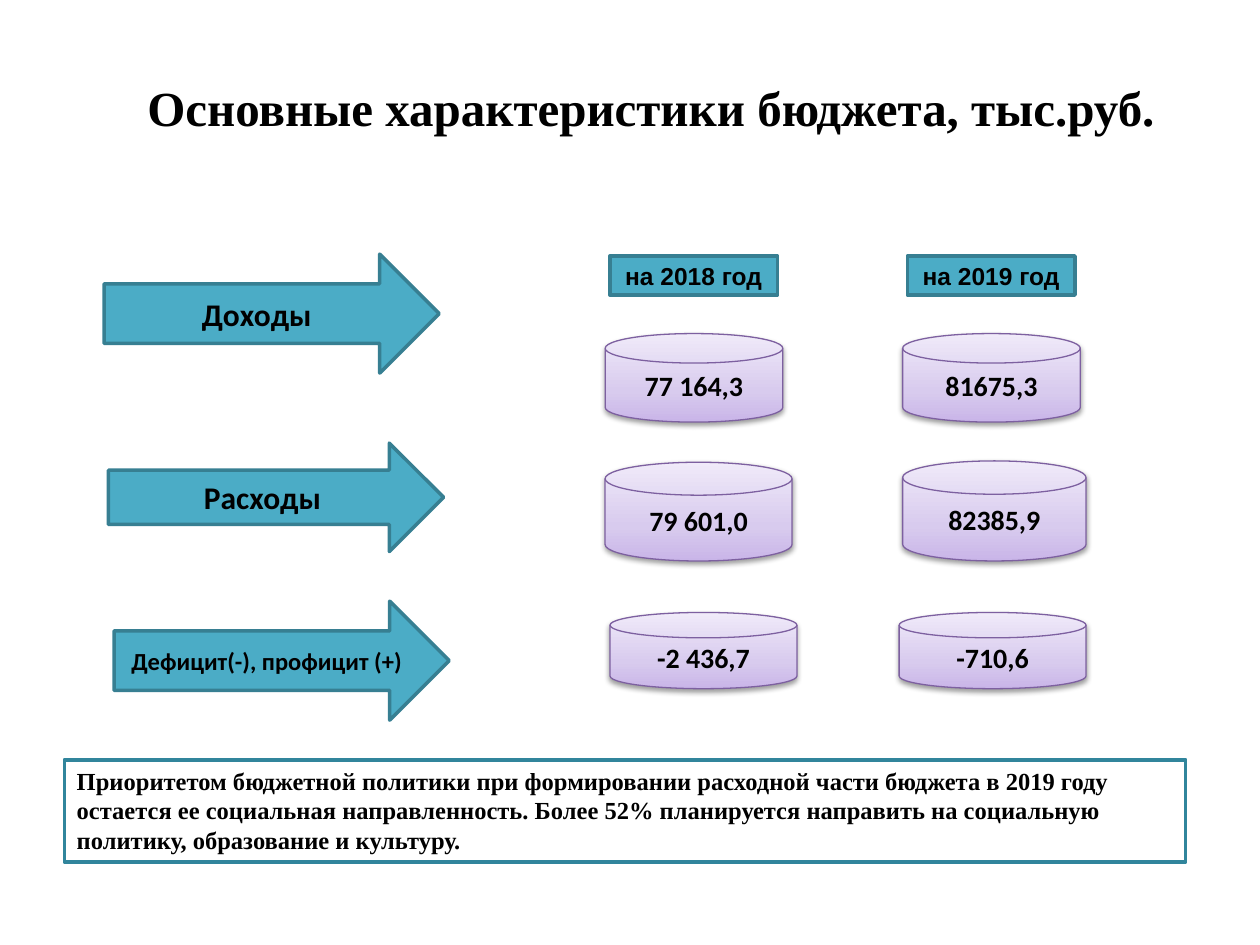
"""Build a slide of the main budget figures for 2018 and 2019."""
import pptx
import pptx.dml.color
import pptx.enum.shapes
import pptx.enum.text
import pptx.oxml
import pptx.oxml.ns
import pptx.util
from lxml import etree

Pt = pptx.util.Pt
RGBColor = pptx.dml.color.RGBColor
SHAPE = pptx.enum.shapes.MSO_SHAPE
ALIGN = pptx.enum.text.PP_ALIGN
ANCHOR = pptx.enum.text.MSO_ANCHOR
qn = pptx.oxml.ns.qn

BLACK = RGBColor(0x00, 0x00, 0x00)
WHITE = RGBColor(0xFF, 0xFF, 0xFF)
TEAL = RGBColor(0x4B, 0xAC, 0xC6)
DARK_TEAL = RGBColor(0x37, 0x7F, 0x92)
NOTE_TEAL = RGBColor(0x31, 0x85, 0x9C)
PURPLE = RGBColor(0x7D, 0x60, 0xA0)
LILACS = [(0, RGBColor(0xC9, 0xB5, 0xE8)), (35, RGBColor(0xD8, 0xCB, 0xEE)),
          (100, RGBColor(0xF0, 0xEA, 0xF9))]

TITLE = "Основные характеристики бюджета, тыс.руб."
NOTE = ("Приоритетом бюджетной политики при формировании расходной части бюджета "
        "в 2019 году остается ее социальная направленность. Более 52% планируется "
        "направить на социальную политику, образование и культуру.")
YEARS = [("на 2018 год", 348.5), ("на 2019 год", 518.5)]
INDICATORS = [
    ("Доходы", 18, (59.5, 145.2, 191.5, 68)),
    ("Расходы", 18, (62, 253.2, 191.5, 62)),
    ("Дефицит(-), профицит (+)", 14, (65.2, 343.5, 191.5, 68)),
]
AMOUNTS = [
    ("77\u00a0164,3", (345.8, 190.6, 101.5, 50.6)),
    ("81675,3", (515.8, 190.6, 101.5, 50.6)),
    ("79 601,0", (345.8, 264.2, 106.8, 56.4)),
    ("82385,9", (515.8, 263.4, 104.8, 57.2)),
    ("-2\u00a0436,7", (348.6, 350, 106.8, 43.6)),
    ("-710,6", (513.8, 350, 106.8, 43.6)),
]


def write(frame, text, font, size, align=ALIGN.CENTER):
    frame.text = text
    frame.word_wrap = True
    paragraph = frame.paragraphs[0]
    paragraph.alignment = align
    paragraph.font.name = font
    paragraph.font.size = Pt(size)
    paragraph.font.bold = True
    paragraph.font.color.rgb = BLACK


def add_figure(slide, kind, box, line, line_width, fill=None):
    figure = slide.shapes.add_shape(kind, *map(Pt, box))
    figure.shadow.inherit = False
    figure.line.color.rgb = line
    figure.line.width = Pt(line_width)
    if fill is not None:
        figure.fill.solid()
        figure.fill.fore_color.rgb = fill
    figure.text_frame.vertical_anchor = ANCHOR.MIDDLE
    return figure


def shade(disk):
    disk.fill.gradient()
    disk.fill.gradient_angle = 90
    properties = disk.element.spPr
    stops = properties.find(".//" + qn("a:gsLst"))
    for stop in list(stops):
        stops.remove(stop)
    for position, color in LILACS:
        stop = etree.SubElement(stops, qn("a:gs"), pos=str(position * 1000))
        etree.SubElement(stop, qn("a:srgbClr"), val=str(color))
    shadow = etree.SubElement(
        properties.find(qn("a:effectLst")), qn("a:outerShdw"),
        blurRad=str(Pt(3.1)), dist=str(Pt(1.6)), dir="5400000", rotWithShape="0")
    tone = etree.SubElement(shadow, qn("a:srgbClr"), val=str(BLACK))
    etree.SubElement(tone, qn("a:alpha"), val="38000")


def main():
    deck = pptx.Presentation()
    deck.slide_width, deck.slide_height = Pt(720), Pt(540)
    slide = deck.slides.add_slide(deck.slide_layouts[5])

    title = slide.shapes.title
    title.left, title.top, title.width, title.height = map(Pt, (48, 44, 648, 73))
    write(title.text_frame, TITLE, "Times New Roman", 28)
    title.text_frame.vertical_anchor = ANCHOR.TOP
    title.text_frame.margin_top = 0

    for name, size, box in INDICATORS:
        arrow = add_figure(slide, SHAPE.RIGHT_ARROW, box, DARK_TEAL, 2, TEAL)
        write(arrow.text_frame, name, "Calibri", size)

    for year, left in YEARS:
        heading = add_figure(slide, SHAPE.RECTANGLE, (left, 146.3, 95.8, 22.3),
                             DARK_TEAL, 2, TEAL)
        write(heading.text_frame, year, "Arial", 14)

    for amount, box in AMOUNTS:
        disk = add_figure(slide, SHAPE.FLOWCHART_MAGNETIC_DISK, box, PURPLE, 0.75)
        shade(disk)
        write(disk.text_frame, amount, "Calibri", 16)

    note = add_figure(slide, SHAPE.RECTANGLE, (36.8, 434.2, 640.8, 58.3),
                      NOTE_TEAL, 2, WHITE)
    write(note.text_frame, NOTE, "Times New Roman", 14, ALIGN.LEFT)
    note.text_frame.vertical_anchor = ANCHOR.TOP

    deck.save("out.pptx")


if __name__ == "__main__":
    main()
